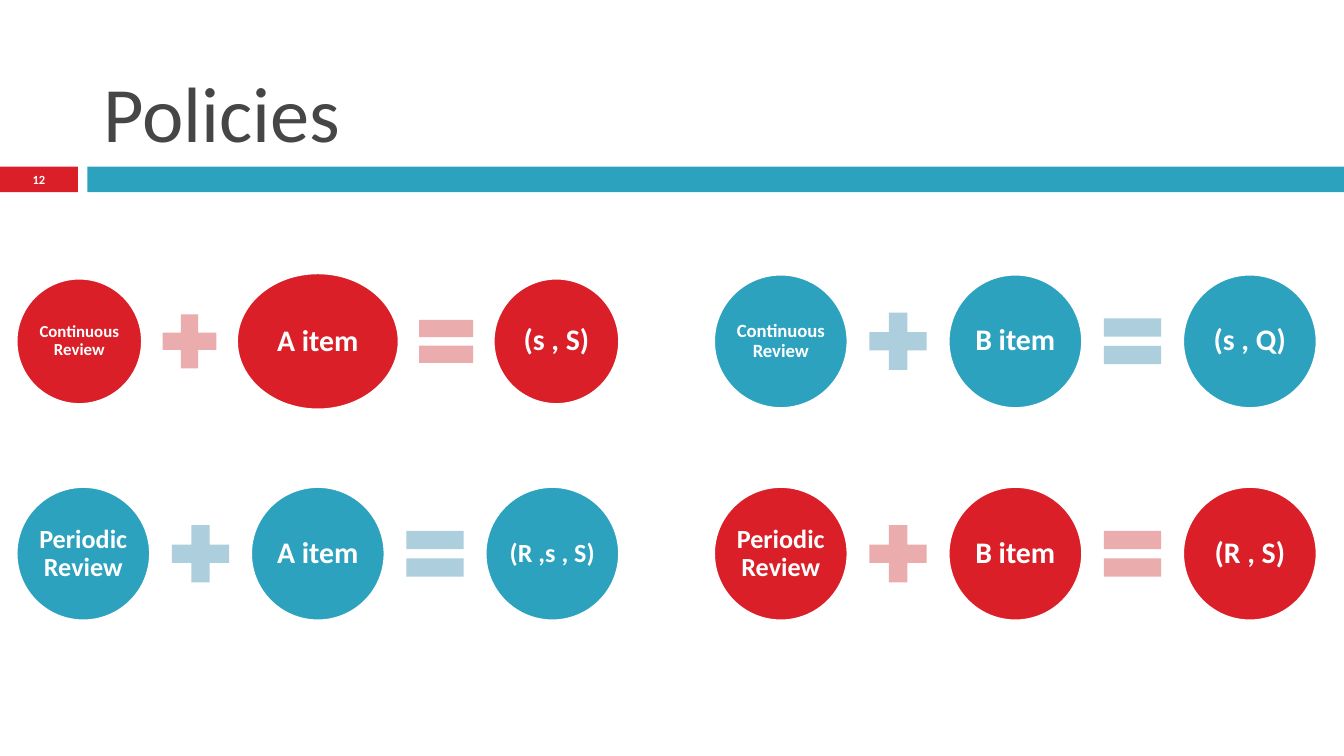
from dataclasses import dataclass

from pptx import Presentation
from pptx.dml.color import RGBColor
from pptx.enum.shapes import MSO_SHAPE
from pptx.enum.text import MSO_ANCHOR, PP_ALIGN
from pptx.util import Inches, Pt

RECT = MSO_SHAPE.RECTANGLE
OVAL = MSO_SHAPE.OVAL
PLUS = MSO_SHAPE.MATH_PLUS
EQUAL = MSO_SHAPE.MATH_EQUAL
MIDDLE, BOTTOM = MSO_ANCHOR.MIDDLE, MSO_ANCHOR.BOTTOM
LEFT, CENTER = PP_ALIGN.LEFT, PP_ALIGN.CENTER


@dataclass(frozen=True)
class Theme:
    font: str = "Calibri"
    red: str = "DA1F28"
    pale_red: str = "EAACAD"
    teal: str = "2DA2BF"
    pale_teal: str = "ADCEDC"
    white: str = "FFFFFF"
    dark: str = "464646"
    title: float = 42
    number: float = 6.7
    large: float = 16
    medium: float = 14
    small: float = 10
    tiny: float = 9


THEME = Theme()
RED = (THEME.red, THEME.pale_red)
TEAL = (THEME.teal, THEME.pale_teal)


def add_filled(shapes, kind, box, color, outline=None):
    sp = shapes.add_shape(kind, *map(Inches, box))
    sp.shadow.inherit = False
    sp.fill.solid()
    sp.fill.fore_color.rgb = RGBColor.from_string(color)
    if outline:
        sp.line.color.rgb = RGBColor.from_string(outline)
        sp.line.width = Pt(1.5)
    else:
        sp.line.fill.background()
    return sp


def write(sp, text, size, color, bold=True, align=CENTER, anchor=MIDDLE,
          insets=(0.02, 0.02, 0.02, 0.02), spacing=1.0):
    tf = sp.text_frame
    tf.word_wrap = True
    tf.vertical_anchor = anchor
    (tf.margin_left, tf.margin_top,
     tf.margin_right, tf.margin_bottom) = map(Inches, insets)
    p = tf.paragraphs[0]
    p.alignment = align
    p.line_spacing = spacing
    r = p.add_run()
    r.text = text
    r.font.name = THEME.font
    r.font.size = Pt(size)
    r.font.bold = bold
    r.font.color.rgb = RGBColor.from_string(color)


def add_header(s, box, title, number):
    x, y, w, h = box
    bar_h, number_w, bar_x = 0.19, 0.58, 0.65
    bar_y = y + h - bar_h
    tab = add_filled(s.shapes, RECT, (x, bar_y, number_w, bar_h), THEME.red)
    write(tab, number, THEME.number, THEME.white, insets=(0, 0, 0, 0))
    add_filled(s.shapes, RECT, (x + bar_x, bar_y, w - bar_x, bar_h), THEME.teal)
    title_box = (x + 0.67, y, 8.92, h - bar_h - 0.01)
    sp = s.shapes.add_textbox(*map(Inches, title_box))
    write(sp, title, THEME.title, THEME.dark, bold=False, align=LEFT,
          anchor=BOTTOM, insets=(0.1, 0.05, 0.1, 0.05))


def add_equation(s, box, terms, colors, size=1.0, middle=(1.0, 1.0)):
    x, y, w, h = box
    fill, pale = colors
    sign = 0.58 * size
    widths = (size, sign, middle[0], sign, size)
    heights = (size, sign, middle[1], sign, size)
    kinds = (OVAL, PLUS, OVAL, EQUAL, OVAL)
    gap = (w - sum(widths)) / (len(widths) - 1)
    shapes = s.shapes.add_group_shape().shapes
    labels = iter(terms)
    for kind, part_w, part_h in zip(kinds, widths, heights):
        part = (x, y + (h - part_h) / 2, part_w, part_h)
        if kind == OVAL:
            text, points = next(labels)
            inset = 0.02 if points > THEME.small else 0.01
            sp = add_filled(shapes, kind, part, fill, THEME.white)
            write(sp, text, points, THEME.white,
                  insets=(inset,) * 4, spacing=0.9)
        else:
            add_filled(shapes, kind, part, pale)
        x += part_w + gap


def add_policies(s, box):
    x, y, w, h = box
    cell_w, cell_h = 4.49, 1.02
    right, lower = x + w - cell_w, y + h - cell_h
    a_item, b_item = ("A item", THEME.large), ("B item", THEME.large)
    periodic = ("Periodic Review", THEME.medium)
    add_equation(s, (x, y, cell_w, cell_h),
                 (("Continuous Review", THEME.tiny), a_item, ("(s , S)", THEME.large)),
                 RED, size=0.94, middle=(1.21, 1.02))
    add_equation(s, (right, lower, cell_w, cell_h),
                 (periodic, b_item, ("(R , S)", THEME.large)), RED)
    add_equation(s, (right, y, cell_w, cell_h),
                 (("Continuous Review", THEME.small), b_item, ("(s , Q)", THEME.large)),
                 TEAL)
    add_equation(s, (x, lower, cell_w, cell_h),
                 (periodic, a_item, ("(R ,s , S)", THEME.medium)), TEAL)


def main():
    prs = Presentation()
    prs.slide_width = Inches(10)
    prs.slide_height = prs.slide_width * 9 // 16
    s = prs.slides.add_slide(prs.slide_layouts[6])
    add_header(s, (0, 0.13, 10, 1.3), "Policies", "12")
    add_policies(s, (0.12, 2.03, 9.68, 2.6))
    prs.save("out.pptx")


if __name__ == "__main__":
    main()
